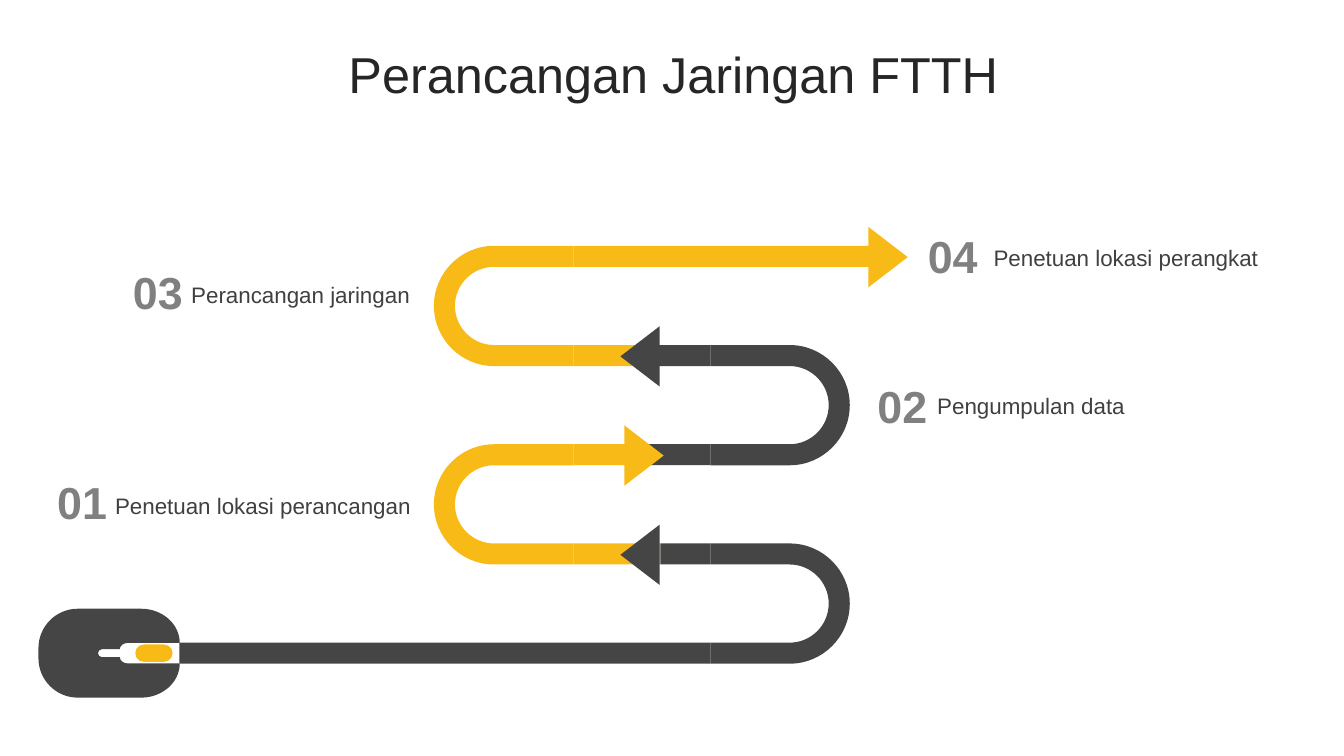
from pptx import Presentation
from pptx.dml.color import RGBColor
from pptx.enum.shapes import MSO_SHAPE
from pptx.enum.text import MSO_ANCHOR, PP_ALIGN
from pptx.oxml.ns import qn
from pptx.util import Cm, Pt

RECT, TRIANGLE, ROUNDED = MSO_SHAPE.RECTANGLE, MSO_SHAPE.ISOSCELES_TRIANGLE, MSO_SHAPE.ROUNDED_RECTANGLE
LEFT, CENTER, RIGHT = PP_ALIGN.LEFT, PP_ALIGN.CENTER, PP_ALIGN.RIGHT
MIDDLE = MSO_ANCHOR.MIDDLE

THEME = {
    "yellow": RGBColor(0xF8, 0xBA, 0x16),
    "dark": RGBColor(0x45, 0x45, 0x45),
    "title": {"name": "Arial", "size": Pt(36), "bold": False, "color": RGBColor(0x26, 0x26, 0x26)},
    "number": {"name": "Arial", "size": Pt(32), "bold": True, "color": RGBColor(0x80, 0x80, 0x80)},
    "label": {"name": "Arial", "size": Pt(16), "bold": False, "color": RGBColor(0x40, 0x40, 0x40)},
}

# Path geometry in cm: five levels, the lowest one leaves the mouse
TOP, PITCH, THICK = 6.46, 2.5, 0.53
LEVELS = [TOP + PITCH * i for i in range(5)]
ARROW_W, ARROW_H = 1.52, 0.99
BEND_END = {-1: 14.45, 1: 17.91}
BEND_CENTER = {-1: 12.45, 1: 19.9}
ROUNDNESS = 0.55
POINT, CORNER = False, True


def add_outline(group, vertices):
    """Draw a closed outline; each CORNER vertex is rounded into a quarter curve."""
    points, curve_starts = [], []
    for i, (x, y, is_corner) in enumerate(vertices):
        if is_corner:
            curve_starts.append(len(points) - 1)
            for nx, ny, _ in (vertices[i - 1], vertices[i + 1]):
                points.append((nx + ROUNDNESS * (x - nx), ny + ROUNDNESS * (y - ny)))
        else:
            points.append((x, y))
    points = [(Cm(x), Cm(y)) for x, y in points]
    builder = group.shapes.build_freeform(*points[0])
    builder.add_line_segments(points[1:], close=True)
    s = builder.convert_to_shape()
    lines = s._element.xpath(".//a:lnTo")
    for start in curve_starts:
        curve = lines[start]
        curve.tag = qn("a:cubicBezTo")
        for line in lines[start + 1:start + 3]:
            curve.append(line[0])
            line.getparent().remove(line)
    return s


prs = Presentation()
prs.slide_width, prs.slide_height = Cm(33.87), Cm(19.05)
slide = prs.slides.add_slide(prs.slide_layouts[5])
painted = []
texts = []

# Title
s = slide.shapes.title
s.left, s.top, s.width, s.height = Cm(0.89), Cm(0.94), Cm(32.16), Cm(2.01)
s.text_frame.vertical_anchor = MIDDLE
p = s.text_frame.paragraphs[0]
p.line_spacing, p.space_before = 0.9, Pt(10)
texts.append((p, "Perancangan Jaringan FTTH", CENTER, "title"))

# Path sections: colour, bend side, upper level, bars (level, from, to), arrow centre, arrow turn
sections = [
    ("yellow", -1, 0, [(1, 14.45, 16.64), (0, 14.45, 22.07)], 22.38, 90),
    ("dark", 1, 1, [(2, 15.72, 17.91), (1, 16.61, 17.91)], 16.13, 270),
    ("yellow", -1, 2, [(3, 14.45, 16.64), (2, 14.45, 16.0)], 16.23, 90),
    ("dark", 1, 3, [(4, 4.52, 17.91), (3, 16.64, 17.91)], 16.13, 270),
]
for color, side, upper, bars, arrow_x, turn in sections:
    group = slide.shapes.add_group_shape()
    for level, start, end in bars:
        s = group.shapes.add_shape(RECT, Cm(start), Cm(LEVELS[level] - THICK / 2), Cm(end - start), Cm(THICK))
        painted.append((s, color))

    cx, cy, end = BEND_CENTER[side], LEVELS[upper] + PITCH / 2, BEND_END[side]
    bend = []
    for radius, way in (((PITCH + THICK) / 2, 1), ((PITCH - THICK) / 2, -1)):
        edge = cx + side * radius
        bend += [(end, cy - radius, POINT), (cx, cy - radius, POINT), (edge, cy - radius, CORNER),
                 (edge, cy, POINT), (edge, cy + radius, CORNER), (cx, cy + radius, POINT),
                 (end, cy + radius, POINT)][::way]
    painted.append((add_outline(group, bend), color))

    s = group.shapes.add_shape(TRIANGLE, Cm(arrow_x - ARROW_W / 2), Cm(LEVELS[upper] + 0.02 - ARROW_H / 2),
                               Cm(ARROW_W), Cm(ARROW_H))
    s.rotation = turn
    painted.append((s, color))

# Computer mouse: upper half of the outline, mirrored for the lower half
group = slide.shapes.add_group_shape()
axis = LEVELS[4]
half = [(0.97, 0.13, POINT), (0.97, 1.12, CORNER), (1.96, 1.12, POINT), (3.56, 1.12, POINT),
        (4.53, 1.12, CORNER), (4.53, 0.26, POINT), (3.23, 0.26, POINT), (3.02, 0.26, CORNER),
        (3.02, 0.1, POINT), (2.57, 0.1, POINT), (2.47, 0.1, CORNER), (2.47, 0, POINT)]
mouse = [(x, axis - y, kind) for x, y, kind in half] + [(x, axis + y, kind) for x, y, kind in half[-2::-1]]
painted.append((add_outline(group, mouse), "dark"))
s = group.shapes.add_shape(ROUNDED, Cm(3.41), Cm(axis - 0.22), Cm(0.94), Cm(0.44))
s.adjustments[0] = 0.5
painted.append((s, "yellow"))

for s, color in painted:
    s.shadow.inherit = False
    s.fill.solid()
    s.fill.fore_color.rgb = THEME[color]
    s.line.fill.background()

# Steps: number with its place, label with its place and width
steps = [
    ("01", 0.71, 11.84, "Penetuan lokasi perancangan", 2.42, 12.27, 8.18, RIGHT),
    ("02", 21.38, 9.42, "Pengumpulan data", 23.37, 9.76, 5.79, LEFT),
    ("03", 2.62, 6.55, "Perancangan jaringan", 4.57, 6.96, 6.65, LEFT),
    ("04", 22.65, 5.64, "Penetuan lokasi perangkat", 24.79, 6.02, 7.32, LEFT),
]
for number, nx, ny, label, lx, ly, width, align in steps:
    for text, x, y, w, h, inset, al, style in [
        (number, nx, ny, 2.72, 1.63, 0.3, CENTER, "number"),
        (label, lx, ly, width, 0.94, 0.25, align, "label"),
    ]:
        tf = slide.shapes.add_textbox(Cm(x), Cm(y), Cm(w), Cm(h)).text_frame
        tf.word_wrap = True
        tf.margin_left = tf.margin_right = Cm(inset)
        texts.append((tf.paragraphs[0], text, al, style))

# Text formats
for p, text, align, style in texts:
    p.alignment = align
    r = p.add_run()
    r.text = text
    for key, value in THEME[style].items():
        if key == "color":
            r.font.color.rgb = value
        else:
            setattr(r.font, key, value)

prs.save("out.pptx")
